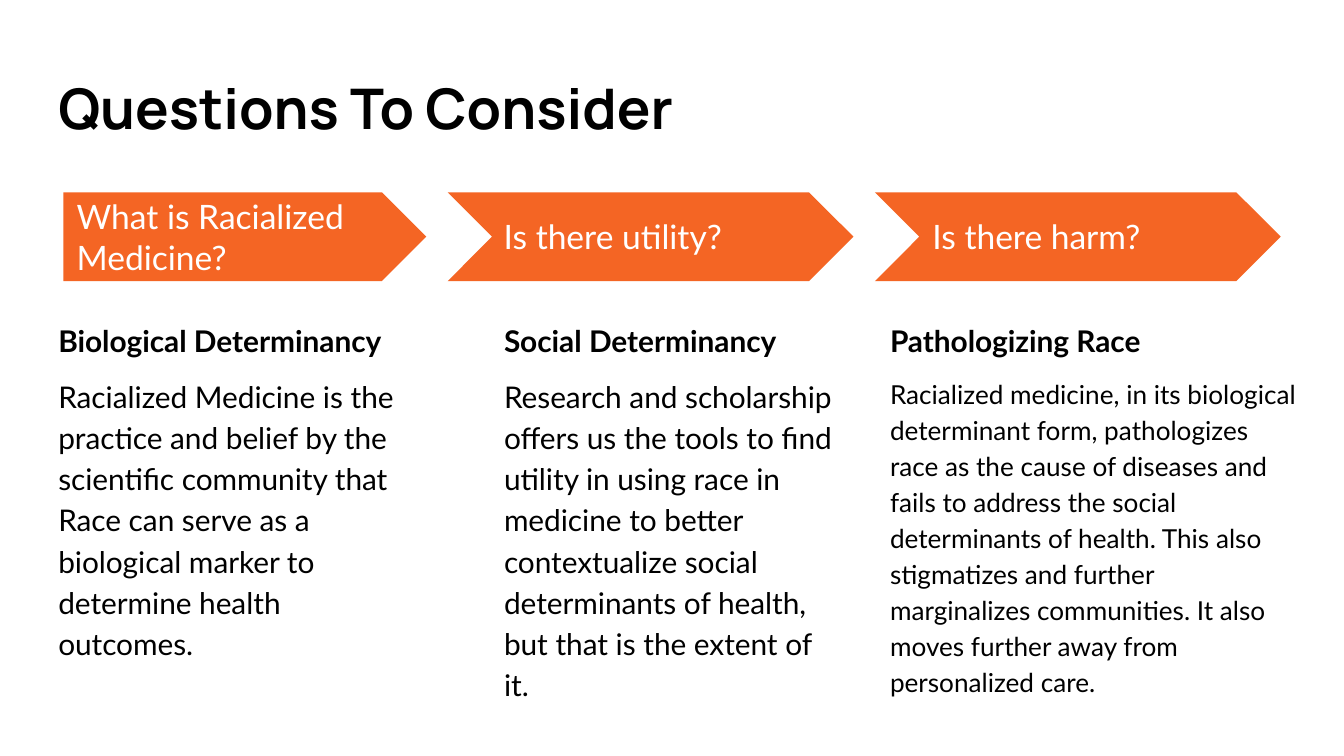
from pptx import Presentation
from pptx.dml.color import RGBColor
from pptx.enum.shapes import MSO_SHAPE
from pptx.enum.text import MSO_ANCHOR, MSO_AUTO_SIZE, PP_ALIGN
from pptx.oxml.xmlchemy import OxmlElement
from pptx.util import Pt

PENTAGON, CHEVRON = MSO_SHAPE.PENTAGON, MSO_SHAPE.CHEVRON
TOP, MIDDLE = MSO_ANCHOR.TOP, MSO_ANCHOR.MIDDLE
NO_FIT = MSO_AUTO_SIZE.NONE
LEFT = PP_ALIGN.LEFT
COMPARISON = 4  # layout with a title and four text placeholders


def rgb(value):
    return RGBColor.from_string(value)


def set_values(obj, values):
    for name, value in values.items():
        setattr(obj, name, value)


class Deck:
    ORANGE, BLACK, WHITE = "F46524", "000000", "FFFFFF"
    HEAD, BODY = "Manrope", "Lato"
    INSET = Pt(7.2)

    def __init__(self, width, height):
        self.prs = Presentation()
        set_values(self.prs, {"slide_width": Pt(width), "slide_height": Pt(height)})
        self.s = self.prs.slides.add_slide(self.prs.slide_layouts[COMPARISON])
        bg = self.s.background.fill
        bg.solid()
        bg.fore_color.rgb = rgb(self.WHITE)

    def place(self, sp, box, anchor=TOP):
        names = ("left", "top", "width", "height")
        set_values(sp, dict(zip(names, map(Pt, box))))
        tf = sp.text_frame
        set_values(tf, {"word_wrap": True, "auto_size": NO_FIT,
                        "vertical_anchor": anchor})
        set_values(tf, {f"margin_{side}": self.INSET
                        for side in ("left", "top", "right", "bottom")})
        return tf

    def add_text(self, p, text, size, color=BLACK, font=BODY, bold=False,
                 line=1.0, before=0, after=0):
        set_values(p, {"alignment": LEFT, "line_spacing": line,
                       "space_before": Pt(before), "space_after": Pt(after)})
        r = p.add_run()
        r.text = text
        set_values(r.font, {"size": Pt(size), "name": font, "bold": bold})
        r.font.color.rgb = rgb(color)

    def title(self, text, box):
        tf = self.place(self.s.shapes.title, box)
        self.add_text(tf.paragraphs[0], text, 30, font=self.HEAD, bold=True)

    def column(self, idx, box, heading, text, size, after):
        tf = self.place(self.s.placeholders[idx], box)
        self.add_text(tf.paragraphs[0], heading, 16, bold=True, line=1.15)
        self.add_text(tf.add_paragraph(), text, size, line=1.15, before=8, after=after)
        # No bullet and no hanging indent
        for p in tf.paragraphs:
            pPr = p._p.get_or_add_pPr()
            pPr.set("marL", "0")
            pPr.set("indent", "0")
            pPr.append(OxmlElement("a:buNone"))

    def arrow(self, kind, box):
        sp = self.s.shapes.add_shape(kind, *map(Pt, box))
        sp.adjustments[0] = 0.5
        sp.shadow.inherit = False
        sp.fill.solid()
        sp.fill.fore_color.rgb = rgb(self.ORANGE)
        sp.line.fill.background()

    def label(self, text, box):
        tf = self.place(self.s.shapes.add_textbox(0, 0, 0, 0), box, MIDDLE)
        self.add_text(tf.paragraphs[0], text, 18, self.WHITE)

    def remove_empty(self):
        for sp in list(self.s.placeholders):
            if not sp.text_frame.text:
                sp.element.getparent().remove(sp.element)


# Arrow kind, left, width; label left, label
STEPS = [
    (PENTAGON, 34, 194.4, 34, "What is Racialized Medicine?"),
    (CHEVRON, 239.8, 217.4, 262.8, "Is there utility?"),
    (CHEVRON, 468.7, 217.4, 492.5, "Is there harm?"),
]

# Left, width, height, heading, text, text size, space after
COLUMNS = [
    (24, 194.4, 209, "Biological Determinancy",
     "Racialized Medicine is the practice and belief by the scientific "
     "community that Race can serve as a biological marker to determine "
     "health outcomes.", 16, 0),
    (262.8, 194.4, 209, "Social Determinancy",
     "Research and scholarship offers us the tools to find utility in using "
     "race in medicine to better contextualize social determinants of health, "
     "but that is the extent of it.", 16, 0),
    (469.6, 232.6, 223, "Pathologizing Race",
     "Racialized medicine, in its biological determinant form, pathologizes "
     "race as the cause of diseases and fails to address the social "
     "determinants of health. This also stigmatizes and further marginalizes "
     "communities. It also moves further away from personalized care.", 14, 8),
]


def main():
    deck = Deck(720, 405)
    deck.title("Questions To Consider", (24, 32.4, 671, 50.4))

    # Row of arrows with their questions
    for kind, left, width, label_left, text in STEPS:
        deck.arrow(kind, (left, 103, width, 47.6))
        deck.label(text, (label_left, 114.5, 177.8, 24.5))

    # Text columns below the arrows
    for idx, (left, width, height, *content) in enumerate(COLUMNS, 1):
        deck.column(idx, (left, 162.7, width, height), *content)

    deck.remove_empty()
    deck.prs.save("out.pptx")


if __name__ == "__main__":
    main()
